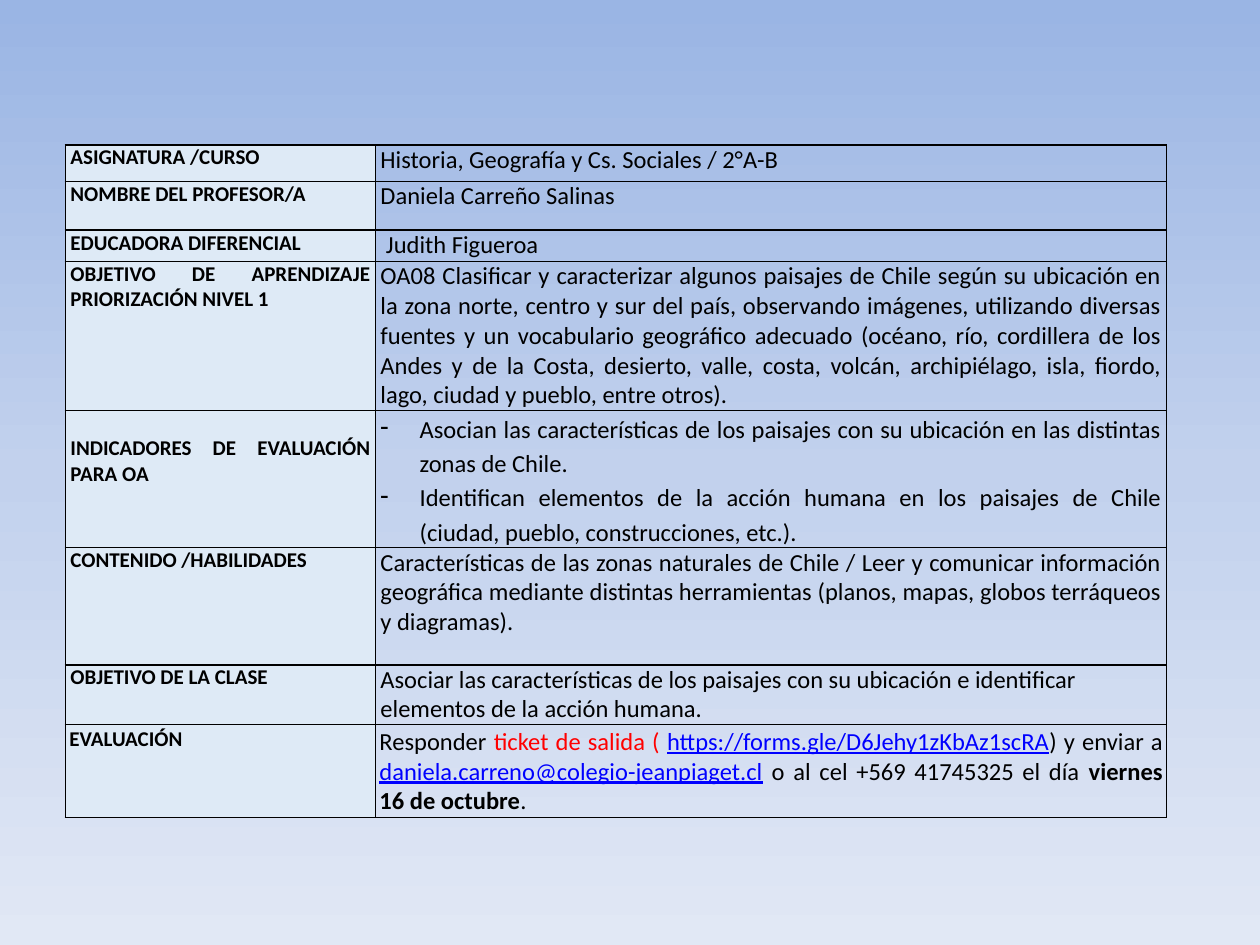
import copy
from dataclasses import dataclass

import pptx
import pptx.dml.color
import pptx.enum.text
import pptx.oxml
import pptx.oxml.ns
import pptx.util
from pptx.util import Cm

ALIGN = pptx.enum.text.PP_ALIGN


@dataclass(frozen=True)
class Theme:
    font: str = "Calibri"
    label_size: int = 12
    body_size: int = 14
    ink: str = "000000"
    accent: str = "FF0000"
    link: str = "0000FF"
    label_fill: str = "DEEAF6"
    border: str = "000000"
    background: tuple = ((0, "9AB5E4"), (0.5, "C2D1ED"), (1, "E1E8F5"))


THEME = Theme()
LINK = {"color": THEME.link, "underline": True}

# Label, row height in cm, paragraphs; a paragraph is text or (text, format) runs.
ROWS = [
    ("ASIGNATURA /CURSO", 0.74, ["Historia, Geografía y Cs. Sociales / 2°A-B"]),
    ("NOMBRE DEL PROFESOR/A", 0.98, ["Daniela Carreño Salinas"]),
    ("EDUCADORA DIFERENCIAL", 0.63, [" Judith Figueroa"]),
    ("OBJETIVO DE APRENDIZAJE PRIORIZACIÓN NIVEL 1", 3, [
        "OA08 Clasificar y caracterizar algunos paisajes de Chile según su "
        "ubicación en la zona norte, centro y sur del país, observando imágenes, "
        "utilizando diversas fuentes y un vocabulario geográfico adecuado (océano, "
        "río, cordillera de los Andes y de la Costa, desierto, valle, costa, "
        "volcán, archipiélago, isla, fiordo, lago, ciudad y pueblo, entre otros)."]),
    ("INDICADORES DE EVALUACIÓN PARA OA", 2.74, [
        "Asocian las características de los paisajes con su ubicación en las "
        "distintas zonas de Chile.",
        "Identifican elementos de la acción humana en los paisajes de Chile "
        "(ciudad, pueblo, construcciones, etc.)."]),
    ("CONTENIDO /HABILIDADES", 2.36, [
        "Características de las zonas naturales de Chile / Leer y comunicar "
        "información geográfica mediante distintas herramientas (planos, mapas, "
        "globos terráqueos y diagramas)."]),
    ("OBJETIVO DE LA CLASE", 1.19, [
        "Asociar las características de los paisajes con su ubicación e "
        "identificar elementos de la acción humana."]),
    ("EVALUACIÓN", 1.88, [[
        ("Responder ", {}),
        ("ticket de salida ( ", {"color": THEME.accent}),
        ("https://forms.gle/D6Jehy1zKbAz1scRA", LINK),
        (") y enviar a ", {}),
        ("daniela.carreno@colegio-jeanpiaget.cl", LINK),
        (" o al cel +569 41745325 el día ", {}),
        ("viernes 16 de octubre", {"bold": True}),
        (".", {})]]),
]
INDICATORS, CLASS_GOAL, EVALUATION = 4, 6, 7


def rgb(value):
    return pptx.dml.color.RGBColor.from_string(value)


def add_text(paragraph, text, *, size, bold=False, color=THEME.ink, underline=False):
    run = paragraph.add_run()
    run.text = text
    font = run.font
    font.name, font.size = THEME.font, pptx.util.Pt(size)
    font.bold, font.underline = bold, underline
    font.color.rgb = rgb(color)


def add_dash(paragraph):
    """Give the paragraph a hanging dash bullet and its line spacing."""
    paragraph.line_spacing = 1.15
    properties = paragraph._p.get_or_add_pPr()
    properties.set("marL", str(Cm(0.79)))
    properties.set("indent", str(-Cm(0.79)))
    bullet = pptx.oxml.parse_xml(
        f'<a:buChar {pptx.oxml.ns.nsdecls("a")} char="-"/>')
    properties.append(bullet)


def add_borders(cell):
    properties = cell._tc.get_or_add_tcPr()
    for side in ("lnL", "lnR", "lnT", "lnB"):
        properties.append(pptx.oxml.parse_xml(
            f'<a:{side} {pptx.oxml.ns.nsdecls("a")} w="{pptx.util.Pt(1)}">'
            f'<a:solidFill><a:srgbClr val="{THEME.border}"/></a:solidFill>'
            f'</a:{side}>'))


def fill_cell(cell, paragraphs, *, size, bold=False, fill=None, dashes=False,
              align=ALIGN.JUSTIFY, side_margin=0.1, top_margin=0):
    cell.margin_left = cell.margin_right = Cm(side_margin)
    cell.margin_top, cell.margin_bottom = Cm(top_margin), Cm(0)
    add_borders(cell)
    if fill:
        cell.fill.solid()
        cell.fill.fore_color.rgb = rgb(fill)
    else:
        cell.fill.background()
    for index, content in enumerate(paragraphs):
        frame = cell.text_frame
        paragraph = frame.add_paragraph() if index else frame.paragraphs[0]
        paragraph.alignment = align
        if dashes:
            add_dash(paragraph)
        runs = [(content, {})] if isinstance(content, str) else content
        for text, changes in runs:
            add_text(paragraph, text, **{"size": size, "bold": bold, **changes})


def paint_background(slide):
    fill = slide.background.fill
    fill.gradient()
    fill.gradient_angle = 270
    stops = next(slide.element.iter(pptx.oxml.ns.qn("a:gsLst")))
    stops.insert(1, copy.deepcopy(stops[0]))
    for stop, (position, color) in zip(fill.gradient_stops, THEME.background):
        stop.position = position
        stop.color.rgb = rgb(color)


def add_lesson_table(slide):
    column_widths = (6.25, 15.95)
    table = slide.shapes.add_table(
        len(ROWS), 2, Cm(1.32), Cm(2.92), Cm(sum(column_widths)),
        Cm(sum(height for _, height, _ in ROWS))).table
    table.first_row = table.horz_banding = False
    for column, width in zip(table.columns, column_widths):
        column.width = Cm(width)
    for index, (label, height, details) in enumerate(ROWS):
        table.rows[index].height = Cm(height)
        side = 0.08 if index == EVALUATION else 0.1
        top = 0.05 if index == EVALUATION else 0
        fill_cell(table.cell(index, 0), [label], size=THEME.label_size, bold=True,
                  fill=THEME.label_fill, side_margin=side,
                  top_margin=0.51 if index == INDICATORS else top)
        fill_cell(table.cell(index, 1), details, size=THEME.body_size,
                  dashes=index == INDICATORS, side_margin=side, top_margin=top,
                  align=ALIGN.LEFT if index == CLASS_GOAL else ALIGN.JUSTIFY)


def main():
    presentation = pptx.Presentation()
    presentation.slide_width, presentation.slide_height = Cm(25.4), Cm(19.05)
    slide = presentation.slides.add_slide(presentation.slide_layouts[6])
    paint_background(slide)
    add_lesson_table(slide)
    presentation.save("out.pptx")


if __name__ == "__main__":
    main()
